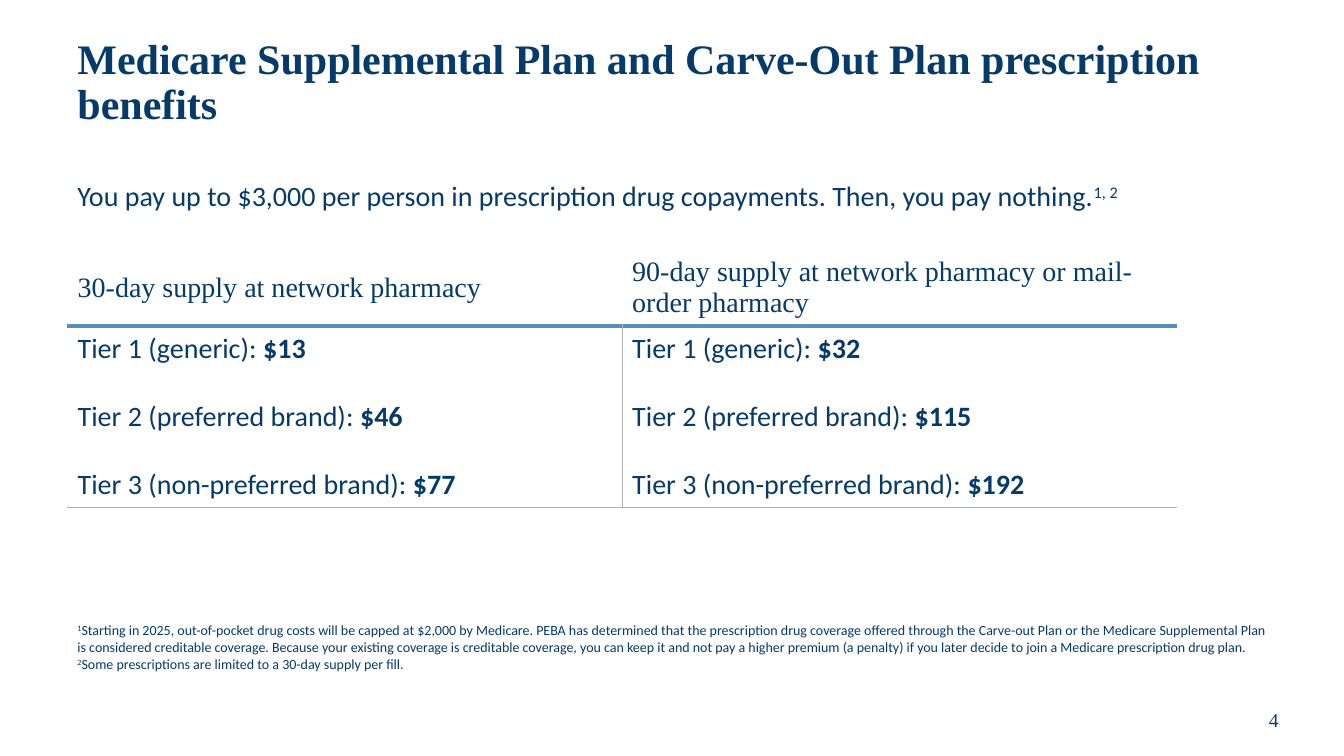
from dataclasses import dataclass

from lxml.etree import SubElement
from pptx import Presentation
from pptx.dml.color import RGBColor
from pptx.enum.text import MSO_ANCHOR as Anchor, PP_ALIGN as Align
from pptx.oxml.ns import qn
from pptx.util import Pt

EMU_PER_PX = 9144


def px(length):
    return length * EMU_PER_PX


@dataclass(frozen=True)
class Theme:
    navy: str = "063A68"
    blue: str = "568EC1"
    grey: str = "B2B2B2"
    serif: str = "Times New Roman"
    sans: str = "Calibri"
    title: int = 30
    body: int = 20
    page: int = 14
    note: int = 10


class SlideBuilder:
    def __init__(self, deck, theme):
        self.theme = theme
        self.slide = deck.slides.add_slide(deck.slide_layouts[6])

    def fill_frame(self, frame, paragraphs, face, size, bold=False, **layout):
        """Add paragraphs, each a list of (text, mark) with mark "", "bold" or "super"."""
        for index, pieces in enumerate(paragraphs):
            paragraph = frame.paragraphs[0] if index == 0 else frame.add_paragraph()
            for name, value in layout.items():
                if index or name != "space_before":
                    setattr(paragraph, name, value)
            for text, mark in pieces:
                run = paragraph.add_run()
                run.text = text
                style = {"name": face, "size": Pt(size), "bold": bold or mark == "bold"}
                for name, value in style.items():
                    setattr(run.font, name, value)
                run.font.color.rgb = RGBColor.from_string(self.theme.navy)
                if mark == "super":
                    run._r.get_or_add_rPr().set("baseline", "30000")

    def text(self, box, paragraphs, face, size, anchor=Anchor.TOP, **style):
        frame = self.slide.shapes.add_textbox(*map(px, box)).text_frame
        frame.word_wrap = True
        frame.vertical_anchor = anchor
        self.fill_frame(frame, paragraphs, face, size, **style)

    def border(self, cell, side, color, points):
        line = SubElement(cell._tc.get_or_add_tcPr(), qn(f"a:ln{side}"), w=str(Pt(points)))
        fill = SubElement(line, qn("a:solidFill"))
        SubElement(fill, qn("a:srgbClr"), val=color)

    def copay_table(self, box, row_heights, supplies):
        """Draw one column per supply: its heading above its tier prices."""
        theme = self.theme
        rule, hairline = (theme.blue, 3), (theme.grey, 0.5)
        table = self.slide.shapes.add_table(2, len(supplies), *map(px, box)).table
        table.first_row = table.horz_banding = False
        for row, height in zip(table.rows, row_heights):
            row.height = px(height)
        last = len(supplies) - 1
        for column, (heading, tiers) in enumerate(supplies):
            head, prices = table.cell(0, column), table.cell(1, column)
            head.vertical_anchor = Anchor.MIDDLE
            self.fill_frame(head.text_frame, [[(heading, "")]], theme.serif, theme.body)
            self.fill_frame(prices.text_frame, tiers, theme.sans, theme.body,
                            space_before=Pt(24.4))
            self.border(head, "B", *rule)
            if column > 0:
                self.border(prices, "L", *hairline)
            if column < last:
                self.border(prices, "R", *hairline)
            self.border(prices, "T", *rule)
            self.border(prices, "B", *hairline)
            for cell in (head, prices):
                cell.fill.background()


TIERS = ("generic", "preferred brand", "non-preferred brand")


def tier_lines(*prices):
    return [[(f"Tier {number} ({kind}): ", ""), (f"${price}", "bold")]
            for number, (kind, price) in enumerate(zip(TIERS, prices), 1)]


SUPPLIES = [
    ("30-day supply at network pharmacy", tier_lines(13, 46, 77)),
    ("90-day supply at network pharmacy or mail-order pharmacy", tier_lines(32, 115, 192)),
]
FOOTNOTES = [
    [("1", "super"),
     ("Starting in 2025, out-of-pocket drug costs will be capped at $2,000 by Medicare. "
      "PEBA has determined that the prescription drug coverage offered through the Carve-out Plan "
      "or the Medicare Supplemental Plan is considered creditable coverage. Because your existing "
      "coverage is creditable coverage, you can keep it and not pay a higher premium (a penalty) "
      "if you later decide to join a Medicare prescription drug plan.", "")],
    [("2", "super"), ("Some prescriptions are limited to a 30-day supply per fill.", "")],
]


def main():
    deck = Presentation()
    deck.slide_width, deck.slide_height = px(1333), px(750)
    theme = Theme()
    page = SlideBuilder(deck, theme)
    left, width = 67, 1200

    page.text((left, 25, width, 115),
              [[("Medicare Supplemental Plan and Carve-Out Plan prescription benefits", "")]],
              theme.serif, theme.title, Anchor.MIDDLE, bold=True, line_spacing=0.9)
    page.text((left, 176, width, 50),
              [[("You pay up to $3,000 per person in prescription drug copayments. "
                 "Then, you pay nothing.", ""), ("1, 2", "super")]],
              theme.sans, theme.body, line_spacing=0.9)
    page.copay_table((left, 247, 1100, 250), (71, 180), SUPPLIES)
    page.text((left, 612, width, 77), FOOTNOTES, theme.sans, theme.note)
    page.text((1205, 689, 117, 50), [[("4", "")]], theme.serif, theme.page,
              Anchor.MIDDLE, alignment=Align.CENTER)
    deck.save("out.pptx")


if __name__ == "__main__":
    main()
